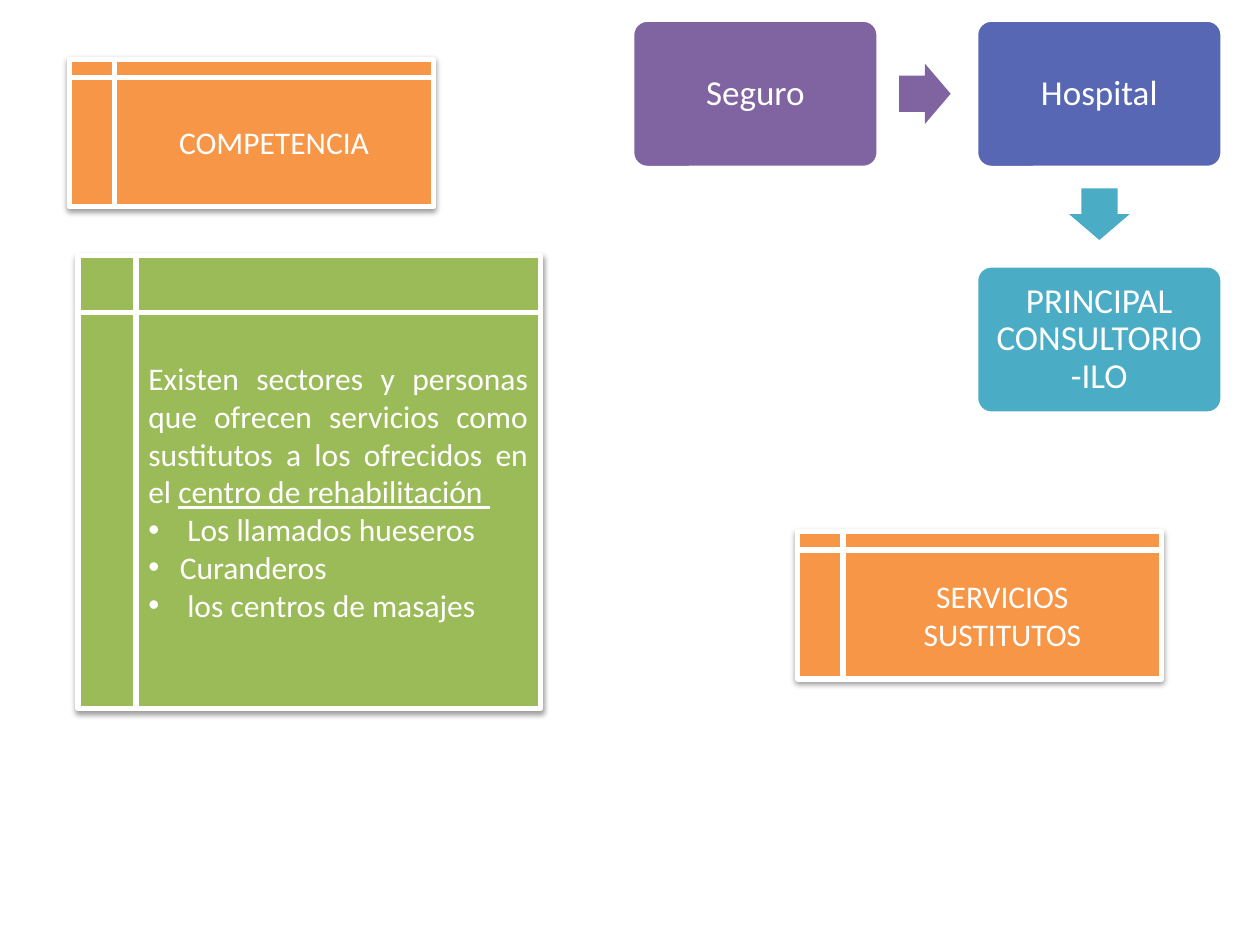
from dataclasses import dataclass

import pptx
import pptx.dml.color
import pptx.enum.shapes
import pptx.enum.text
import pptx.oxml
import pptx.oxml.ns
import pptx.util

SHAPES = pptx.enum.shapes.MSO_SHAPE
ALIGN = pptx.enum.text.PP_ALIGN
SLIDE_WIDTH, SLIDE_HEIGHT = 10, 7.5


@dataclass(frozen=True)
class Theme:
    font: str = "Calibri"
    card_size: int = 20
    frame_size: int = 18
    white: str = "FFFFFF"
    purple: str = "8064A2"
    indigo: str = "5767B4"
    teal: str = "4BACC6"
    orange: str = "F79646"
    green: str = "9BBB59"


THEME = Theme()


@dataclass(frozen=True)
class Box:
    """A rectangle in inches."""
    left: float
    top: float
    width: float
    height: float


def share(left, top, width, height):
    """A box given in percent of the slide's width and height."""
    return Box(left * SLIDE_WIDTH / 100, top * SLIDE_HEIGHT / 100,
               width * SLIDE_WIDTH / 100, height * SLIDE_HEIGHT / 100)


def add_filled_shape(slide, kind, box, fill, line_width=0):
    lengths = (box.left, box.top, box.width, box.height)
    shape = slide.shapes.add_shape(kind, *map(pptx.util.Inches, lengths))
    shape.shadow.inherit = False
    shape.fill.solid()
    shape.fill.fore_color.rgb = pptx.dml.color.RGBColor.from_string(fill)
    if line_width:
        shape.line.color.rgb = pptx.dml.color.RGBColor.from_string(THEME.white)
        shape.line.width = pptx.util.Pt(line_width)
    else:
        shape.line.fill.background()
    return shape


def format_text(shape, size, alignment=ALIGN.CENTER, line_spacing=1.0):
    shape.text_frame.word_wrap = True
    shape.text_frame.vertical_anchor = pptx.enum.text.MSO_ANCHOR.MIDDLE
    for paragraph in shape.text_frame.paragraphs:
        paragraph.alignment = alignment
        paragraph.line_spacing = line_spacing
        for run in paragraph.runs:
            run.font.name = THEME.font
            run.font.size = pptx.util.Pt(size)
            run.font.color.rgb = pptx.dml.color.RGBColor.from_string(THEME.white)


def add_shadow(shape):
    effects = shape.element.spPr.find(pptx.oxml.ns.qn("a:effectLst"))
    effects.append(pptx.oxml.parse_xml(
        f'<a:outerShdw {pptx.oxml.ns.nsdecls("a")} blurRad="40000" dist="20000" '
        'dir="5400000" rotWithShape="0"><a:srgbClr val="000000">'
        '<a:alpha val="38000"/></a:srgbClr></a:outerShdw>'))


def add_bullet(paragraph, indent):
    properties = paragraph._p.get_or_add_pPr()
    properties.set("marL", str(pptx.util.Inches(indent)))
    properties.set("indent", str(-pptx.util.Inches(indent)))
    namespace = pptx.oxml.ns.nsdecls("a")
    properties.append(pptx.oxml.parse_xml(f'<a:buFont {namespace} typeface="Arial"/>'))
    properties.append(pptx.oxml.parse_xml(f'<a:buChar {namespace} char="•"/>'))


def add_frame(slide, box, fill):
    frame = add_filled_shape(slide, SHAPES.FLOWCHART_INTERNAL_STORAGE, box, fill, 3)
    add_shadow(frame)
    return frame


def add_heading(slide, box, text):
    heading = add_frame(slide, box, THEME.orange)
    heading.text_frame.text = text
    format_text(heading, THEME.frame_size)


def add_flow(slide, box):
    """Three cards on a grid of 12 columns and 8 rows, joined by arrows."""
    column, row = box.width / 12, box.height / 8

    def cell(left, top, width, height):
        return Box(box.left + left * column, box.top + top * row,
                   width * column, height * row)

    # Cards: column, row, text, colour
    cards = [(0, 0, "Seguro", THEME.purple),
             (7, 0, "Hospital", THEME.indigo),
             (7, 5, "PRINCIPAL CONSULTORIO -ILO", THEME.teal)]
    for left, top, text, color in cards:
        card = add_filled_shape(slide, SHAPES.ROUNDED_RECTANGLE,
                                cell(left, top, 5, 3), color, 2)
        card.adjustments[0] = 0.1
        frame = card.text_frame
        frame.margin_left = frame.margin_right = pptx.util.Inches(0.11)
        frame.margin_top = frame.margin_bottom = pptx.util.Inches(0.11)
        frame.text = text
        format_text(card, THEME.card_size, line_spacing=0.9)

    # Arrows: centre column, centre row, colour, rotation
    width, height = 1.05, 1.23
    for x, y, color, rotation in [(5.95, 1.5, THEME.purple, 0),
                                  (9.5, 3.95, THEME.teal, 90)]:
        arrow = add_filled_shape(
            slide, SHAPES.RIGHT_ARROW,
            cell(x - width / 2, y - height / 2, width, height), color)
        arrow.adjustments[0] = 0.6
        arrow.rotation = rotation


def add_substitutes(slide, box):
    panel = add_frame(slide, box, THEME.green)
    frame = panel.text_frame
    # The deep bottom margin lifts the text by half a line
    frame.margin_bottom = pptx.util.Inches(0.35)
    frame.text = ("Existen sectores y personas que ofrecen servicios como "
                  "sustitutos a los ofrecidos en el ")
    underlined = frame.paragraphs[0].add_run()
    underlined.text = "centro de rehabilitación "
    underlined.font.underline = True
    for text, indent in [("Los llamados hueseros", 0.31),
                         ("Curanderos", 0.25),
                         ("los centros de masajes", 0.31)]:
        paragraph = frame.add_paragraph()
        paragraph.text = text
        add_bullet(paragraph, indent)
    format_text(panel, THEME.frame_size, ALIGN.JUSTIFY)


def main():
    presentation = pptx.Presentation()
    presentation.slide_width = pptx.util.Inches(SLIDE_WIDTH)
    presentation.slide_height = pptx.util.Inches(SLIDE_HEIGHT)
    slide = presentation.slides.add_slide(presentation.slide_layouts[6])

    add_flow(slide, share(50.2, 2.13, 46.8, 41.6))
    add_heading(slide, share(5.5, 6.27, 28.9, 15.6), "COMPETENCIA")
    add_heading(slide, share(63.3, 56.27, 28.9, 15.6), "SERVICIOS\nSUSTITUTOS")
    add_substitutes(slide, share(6.2, 27.07, 36.7, 47.87))

    presentation.save("out.pptx")


if __name__ == "__main__":
    main()
